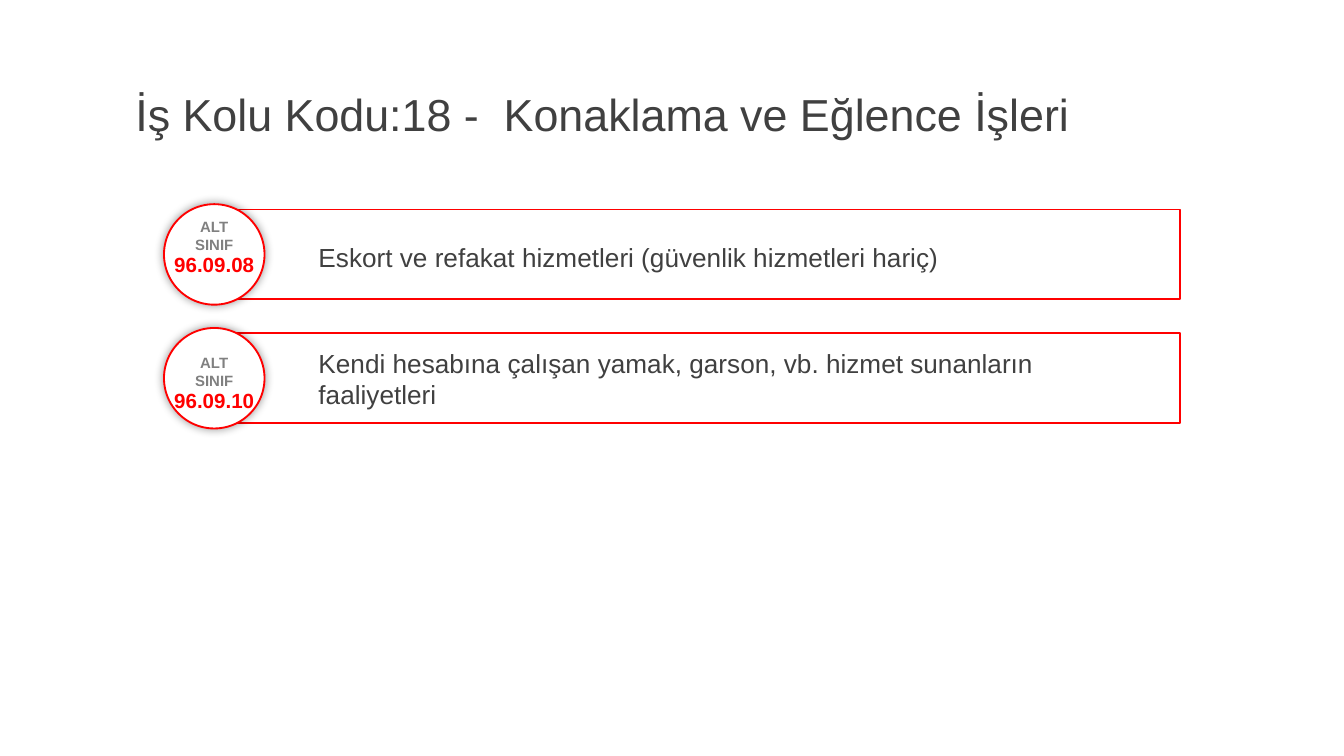
import pptx
import pptx.dml.color
import pptx.enum.shapes
import pptx.enum.text
import pptx.oxml
import pptx.oxml.ns
import pptx.util

Cm = pptx.util.Cm
Pt = pptx.util.Pt
SHAPE = pptx.enum.shapes.MSO_SHAPE
ALIGN = pptx.enum.text.PP_ALIGN
AUTO = pptx.enum.text.MSO_AUTO_SIZE

COLORS = {"text": "404040", "red": "FF0000", "gray": "808080",
          "white": "FFFFFF", "black": "000000"}

TITLE = {"size": Pt(24), "color": "text"}
BODY = {"size": Pt(14), "color": "text"}
LABEL = {"size": Pt(8), "color": "gray", "bold": True}
CODE = {"size": Pt(11), "color": "red", "bold": True}

ROWS = [
    {"code": "96.09.08", "text": "Eskort ve refakat hizmetleri (güvenlik hizmetleri hariç)",
     "text_dy": 0.56, "text_h": 0.87, "label_dy": 0.13},
    {"code": "96.09.10",
     "text": "Kendi hesabına çalışan yamak, garson, vb. hizmet sunanların faaliyetleri",
     "text_dy": 0.23, "text_h": 1.45, "label_dy": 0.36},
]
ROW_TOP = 3.86
ROW_PITCH = 2.34


class Deck:
    font = "Arial"

    def __init__(self, prs):
        self.s = prs.slides.add_slide(prs.slide_layouts[6])

    def color(self, name):
        return pptx.dml.color.RGBColor.from_string(COLORS[name])

    def text(self, box, lines, style, align=ALIGN.LEFT, auto=AUTO.SHAPE_TO_FIT_TEXT):
        tf = self.s.shapes.add_textbox(*map(Cm, box)).text_frame
        frame = {"word_wrap": True, "auto_size": auto,
                 "vertical_anchor": pptx.enum.text.MSO_ANCHOR.MIDDLE}
        for key, value in frame.items():
            setattr(tf, key, value)
        for i, line in enumerate(lines):
            p = tf.add_paragraph() if i else tf.paragraphs[0]
            p.alignment = align
            r = p.add_run()
            r.text = line
            r.font.name = self.font
            for key, value in style.items():
                if key == "color":
                    r.font.color.rgb = self.color(value)
                else:
                    setattr(r.font, key, value)

    def shape(self, kind, box, fill=None):
        sp = self.s.shapes.add_shape(kind, *map(Cm, box))
        sp.shadow.inherit = False
        sp.line.color.rgb = self.color("red")
        sp.line.width = Pt(1)
        if fill:
            sp.fill.solid()
            sp.fill.fore_color.rgb = self.color(fill)
        else:
            sp.fill.background()
        return sp

    def badge(self, box):
        sp = self.shape(SHAPE.OVAL, box, "white")
        effects = sp._element.spPr.find(pptx.oxml.ns.qn("a:effectLst"))
        effects.append(pptx.oxml.parse_xml(
            f'<a:outerShdw {pptx.oxml.ns.nsdecls("a")} blurRad="{Pt(5)}" dist="0" dir="0" '
            f'algn="ctr" rotWithShape="0"><a:srgbClr val="{COLORS["black"]}">'
            '<a:alpha val="40000"/></a:srgbClr></a:outerShdw>'))

    def row(self, top, row):
        self.shape(SHAPE.RECTANGLE, (4.04, top + 0.1, 18.26, 1.7))
        self.text((5.77, top + row["text_dy"], 15.95, row["text_h"]), [row["text"]], BODY)
        self.badge((3.1, top, 1.9, 1.9))
        label_top = top + row["label_dy"]
        self.text((2.9, label_top + 0.63, 2.3, 0.74), [row["code"]], CODE, ALIGN.CENTER)
        self.text((2.9, label_top, 2.3, 0.94), ["ALT", "SINIF"], LABEL, ALIGN.CENTER)


def main():
    prs = pptx.Presentation()
    prs.slide_width = Cm(25.4)
    prs.slide_height = Cm(14.29)
    deck = Deck(prs)
    deck.text((2.31, 1.35, 23.29, 1.6),
              ["İş Kolu Kodu:18 -  Konaklama ve Eğlence İşleri"], TITLE, auto=AUTO.NONE)
    for i, row in enumerate(ROWS):
        deck.row(ROW_TOP + i * ROW_PITCH, row)
    prs.save("out.pptx")


if __name__ == "__main__":
    main()
